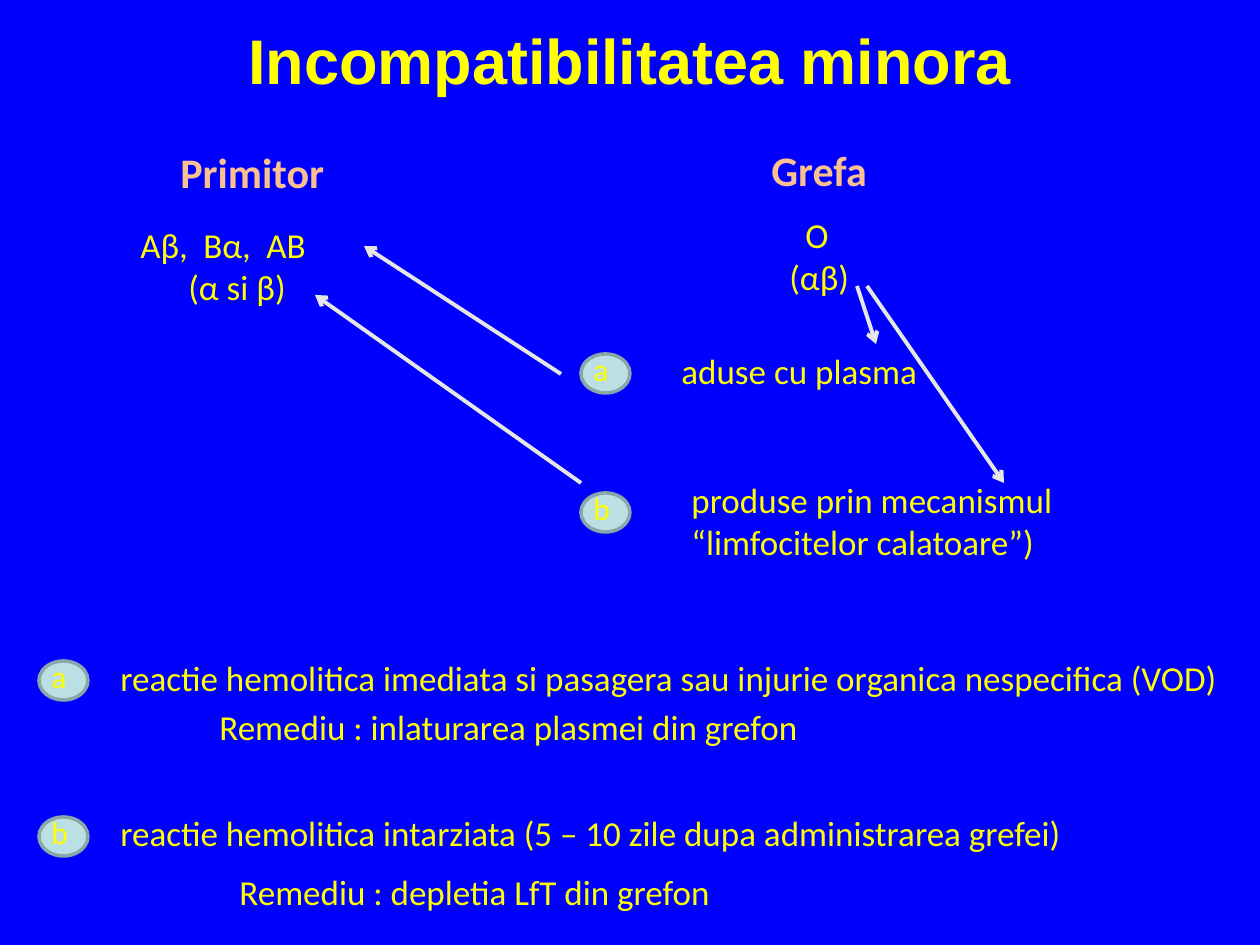
"""Build the slide on minor incompatibility between recipient and graft."""
from lxml.etree import SubElement
from pptx import Presentation
from pptx.dml.color import RGBColor
from pptx.enum.shapes import MSO_CONNECTOR as Connector, MSO_SHAPE as Shape
from pptx.enum.text import MSO_ANCHOR as Anchor, MSO_AUTO_SIZE as AutoSize, PP_ALIGN as Align
from pptx.oxml.ns import qn
from pptx.util import Pt

EMU_PER_PX = 914400 / 126
YELLOW, PEACH = "FFFF00", "FAC090"
TITLE = ("Incompatibilitatea minora", (63, -20, 1134, 158))
HEADINGS = [
    ("Primitor", (168, 140, 237, 63)),
    ("Grefa", (759, 138, 237, 64)),
]
# Each line is (text, left indent, tab stops).
BODY = [
    ([("O", 16, ()), ("(αβ)", 0, ())], (777, 207, 137, 97)),
    ([("Aβ,\tBα,\tAB", 0, (87, 158)), ("(α si β)", 48, ())], (128, 217, 266, 97)),
    ([("aduse cu plasma", 0, ())], (669, 343, 423, 55)),
    ([("produse prin mecanismul", 0, ()), ("“limfocitelor calatoare”)", 0, ())],
     (679, 472, 483, 97)),
    ([("reactie hemolitica imediata si pasagera sau injurie organica nespecifica (VOD)", 0, ())],
     (108, 650, 1131, 55)),
    ([("Remediu : inlaturarea plasmei din grefon", 0, ())], (207, 699, 620, 55)),
    ([("reactie hemolitica intarziata (5 – 10 zile dupa administrarea grefei)", 0, ())],
     (108, 805, 1072, 55)),
    ([("Remediu : depletia LfT din grefon", 0, ())], (227, 864, 699, 55)),
]
BADGES = [("b", 581, 493), ("a", 581, 354), ("a", 39, 661), ("b", 39, 817)]
ARROWS = [
    ((561, 374), (364, 246)),
    ((581, 483), (315, 295)),
    ((857, 286), (876, 344)),
    ((867, 286), (1004, 483)),
]


def px(*lengths):
    return [round(length * EMU_PER_PX) for length in lengths]


def color(hex_value):
    return RGBColor.from_string(hex_value)


def style(paragraph, size, hex_value=YELLOW, bold=False, name="Calibri"):
    font = paragraph.font
    font.name, font.size, font.bold = name, Pt(size), bold
    font.color.rgb = color(hex_value)


def indent(paragraph, left, tabs):
    properties = paragraph._p.get_or_add_pPr()
    properties.set("marL", str(px(left)[0]))
    properties.set("indent", "0")
    if tabs:
        tab_list = SubElement(properties, qn("a:tabLst"))
        for position in px(*tabs):
            SubElement(tab_list, qn("a:tab"), pos=str(position), algn="l")


def add_text(slide, lines, box, size, **look):
    frame = slide.shapes.add_textbox(*px(*box)).text_frame
    frame.word_wrap = True
    frame.auto_size = AutoSize.SHAPE_TO_FIT_TEXT
    for index, (text, left, tabs) in enumerate(lines):
        paragraph = frame.add_paragraph() if index else frame.paragraphs[0]
        paragraph.text = text
        indent(paragraph, left, tabs)
        style(paragraph, size, **look)


def add_title(slide):
    text, box = TITLE
    title = slide.shapes.title
    title.left, title.top, title.width, title.height = px(*box)
    frame = title.text_frame
    frame.text = text
    frame.vertical_anchor = Anchor.MIDDLE
    frame.auto_size = AutoSize.NONE
    paragraph = frame.paragraphs[0]
    paragraph.alignment = Align.CENTER
    style(paragraph, 36, bold=True, name="Arial")


def add_badge(slide, letter, left, top):
    shape = slide.shapes.add_shape(Shape.OVAL, *px(left, top, 49, 39))
    shape.shadow.inherit = False
    shape.fill.solid()
    shape.fill.fore_color.rgb = color("BBE0E3")
    shape.line.color.rgb = color("8AA6A8")
    shape.line.width = Pt(2)
    add_text(slide, [(letter, 0, ())], (left, top - 10, 69, 50), 18)


def add_arrow(slide, start, end):
    arrow = slide.shapes.add_connector(Connector.STRAIGHT, *px(*start, *end))
    arrow.line.color.rgb = color("E6E6E6")
    arrow.line.width = Pt(2.25)
    SubElement(arrow.line._get_or_add_ln(), qn("a:tailEnd"), type="arrow")
    SubElement(arrow._element.spPr, qn("a:effectLst"))


def main():
    presentation = Presentation()
    presentation.slide_width, presentation.slide_height = px(1260, 945)
    slide = presentation.slides.add_slide(presentation.slide_layouts[5])
    slide.background.fill.solid()
    slide.background.fill.fore_color.rgb = color("0000FF")
    add_title(slide)
    for text, box in HEADINGS:
        add_text(slide, [(text, 0, ())], box, 24, hex_value=PEACH, bold=True)
    for lines, box in BODY:
        add_text(slide, lines, box, 20)
    for badge in BADGES:
        add_badge(slide, *badge)
    for start, end in ARROWS:
        add_arrow(slide, start, end)
    presentation.save("out.pptx")


if __name__ == "__main__":
    main()
